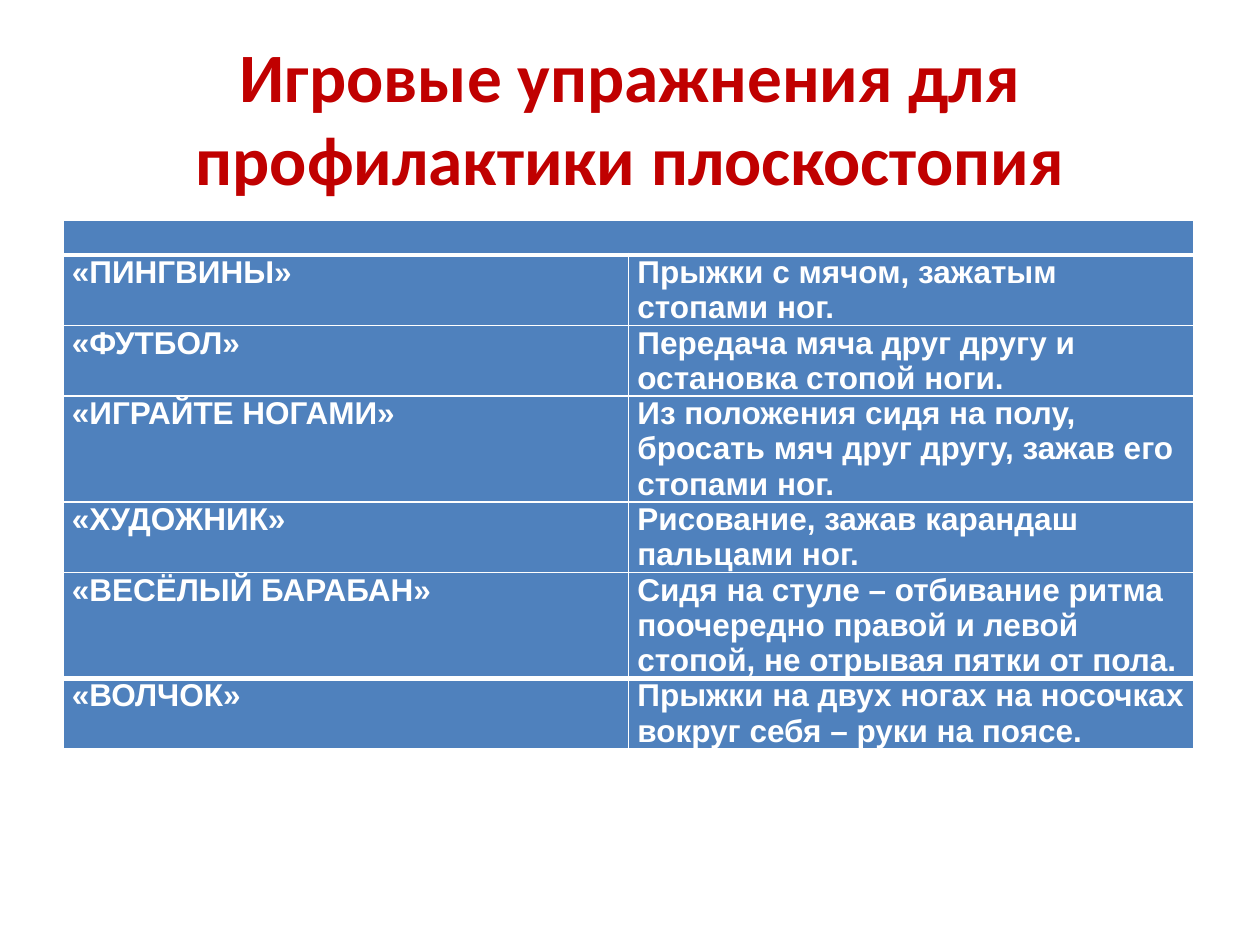
from lxml import etree
from pptx import Presentation
from pptx.dml.color import RGBColor
from pptx.enum.text import MSO_ANCHOR, MSO_AUTO_SIZE, PP_ALIGN
from pptx.oxml.ns import qn
from pptx.util import Cm, Pt

CENTER, LEFT = PP_ALIGN.CENTER, PP_ALIGN.LEFT
MIDDLE, TOP = MSO_ANCHOR.MIDDLE, MSO_ANCHOR.TOP
NO_FIT = MSO_AUTO_SIZE.NONE
TITLE_ONLY = 5

COLORS = {"title": "C00000", "cell": "4F81BD", "white": "FFFFFF"}
TITLE = "Игровые упражнения для профилактики плоскостопия"
EXERCISES = [
    ("«ПИНГВИНЫ»", "Прыжки с мячом, зажатым стопами ног.", 2),
    ("«ФУТБОЛ»", "Передача мяча друг другу и остановка стопой ноги.", 2),
    ("«ИГРАЙТЕ НОГАМИ»",
     "Из положения сидя на полу, бросать мяч друг другу, зажав его стопами ног.", 3),
    ("«ХУДОЖНИК»", "Рисование, зажав карандаш пальцами ног.", 2),
    ("«ВЕСЁЛЫЙ БАРАБАН»",
     "Сидя на стуле – отбивание ритма поочередно правой и левой стопой, "
     "не отрывая пятки от пола.", 3),
    ("«ВОЛЧОК»", "Прыжки на двух ногах на носочках вокруг себя – руки на поясе.", 2),
]
HEADER_HEIGHT, LINE_HEIGHT = 0.69, 0.71


def write(tf, text, font="Arial", size=18, color="white", align=LEFT):
    """Put bold text into the first paragraph of a text frame."""
    p = tf.paragraphs[0]
    p.alignment = align
    r = p.add_run()
    r.text = text
    r.font.name, r.font.size, r.font.bold = font, Pt(size), True
    r.font.color.rgb = RGBColor.from_string(COLORS[color])


def style_cell(cell, top=1, bottom=1):
    """Set the margins, borders and fill of a table cell."""
    cell.margin_left = cell.margin_right = Cm(0.18)
    cell.margin_top = cell.margin_bottom = Cm(0)
    cell.vertical_anchor = TOP
    tc_pr = cell._tc.get_or_add_tcPr()
    for side, width in (("L", 1), ("R", 1), ("T", top), ("B", bottom)):
        ln = etree.SubElement(tc_pr, qn(f"a:ln{side}"), w=str(Pt(width)))
        fill = etree.SubElement(ln, qn("a:solidFill"))
        etree.SubElement(fill, qn("a:srgbClr"), val=COLORS["white"])
    cell.fill.solid()
    cell.fill.fore_color.rgb = RGBColor.from_string(COLORS["cell"])


def add_title(slide):
    """Place and fill the title placeholder."""
    sp = slide.shapes.title
    sp.left, sp.top, sp.width, sp.height = Cm(1.27), Cm(0.76), Cm(22.86), Cm(3.18)
    tf = sp.text_frame
    tf.word_wrap, tf.auto_size, tf.vertical_anchor = True, NO_FIT, MIDDLE
    write(tf, TITLE, font="Calibri", size=39.6, color="title", align=CENTER)


def add_exercises(slide):
    """Add the table of exercises under a merged empty header row."""
    heights = [HEADER_HEIGHT] + [n * LINE_HEIGHT for _, _, n in EXERCISES]
    table = slide.shapes.add_table(
        len(heights), 2, Cm(1.27), Cm(4.45), Cm(22.8), Cm(sum(heights))).table
    for row, height in zip(table.rows, heights):
        row.height = Cm(height)
    last = len(EXERCISES)
    for i in range(len(heights)):
        for cell in table.rows[i].cells:
            style_cell(cell, top=3 if i in (1, last) else 1,
                       bottom=3 if i in (0, last - 1) else 1)
    for cell in table.rows[0].cells:
        p = cell.text_frame.paragraphs[0]
        etree.SubElement(p._p, qn("a:endParaRPr"), sz="1200")
    table.cell(0, 0).merge(table.cell(0, 1))
    for i, (name, task, _) in enumerate(EXERCISES, 1):
        write(table.cell(i, 0).text_frame, name)
        write(table.cell(i, 1).text_frame, task)


def main():
    """Build and save the slide."""
    prs = Presentation()
    prs.slide_width, prs.slide_height = Cm(25.4), Cm(19.05)
    slide = prs.slides.add_slide(prs.slide_layouts[TITLE_ONLY])
    add_title(slide)
    add_exercises(slide)
    prs.save("out.pptx")


if __name__ == "__main__":
    main()
